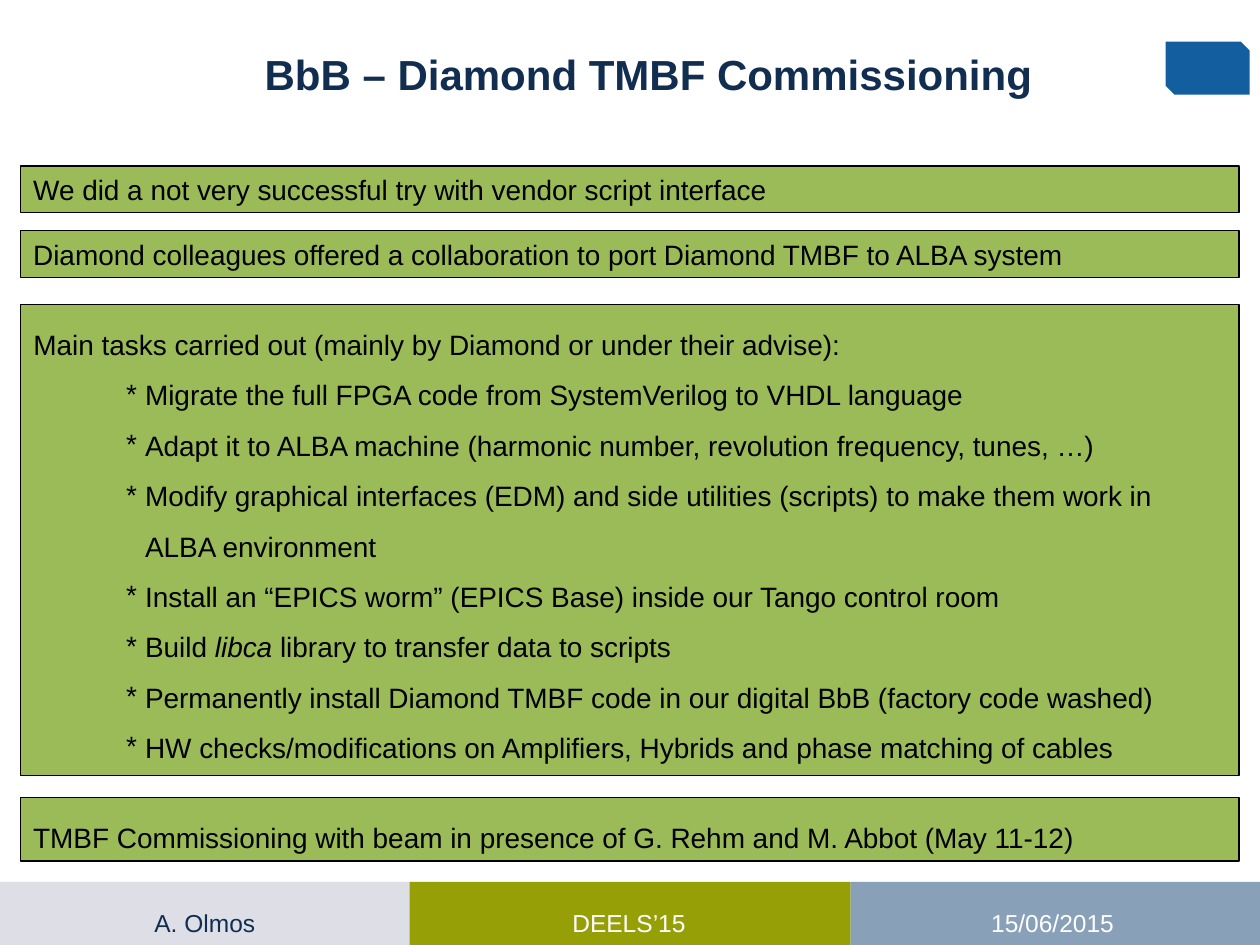
from pptx import Presentation
from pptx.dml.color import RGBColor
from pptx.enum import shapes, text
from pptx.oxml import parse_xml
from pptx.oxml.ns import nsdecls
from pptx.util import Cm, Pt

NAVY = RGBColor(0x11, 0x2E, 0x50)
BLUE = RGBColor(0x12, 0x5E, 0x9F)
GREEN = RGBColor(0x9B, 0xBB, 0x59)
GREY = RGBColor(0xDE, 0xDF, 0xE6)
OLIVE = RGBColor(0x97, 0x9F, 0x07)
STEEL = RGBColor(0x88, 0xA0, 0xB8)
WHITE = RGBColor(0xFF, 0xFF, 0xFF)
BLACK = RGBColor(0, 0, 0)

TITLE = "BbB – Diamond TMBF Commissioning"
# text, top, height, line spacing
NOTES = [
    ("We did a not very successful try with vendor script interface", 3.35, 0.94, 1),
    ("Diamond colleagues offered a collaboration to port Diamond TMBF to ALBA system",
     4.65, 0.94, 1),
    ("TMBF Commissioning with beam in presence of G. Rehm and M. Abbot (May 11-12)",
     16.08, 1.28, 1.5),
]
LEAD = "Main tasks carried out (mainly by Diamond or under their advise):"
# each task is a list of runs; a run in a tuple is italic
TASKS = [
    ["Migrate the full FPGA code from SystemVerilog to VHDL language"],
    ["Adapt it to ALBA machine (harmonic number, revolution frequency, tunes, …)"],
    ["Modify graphical interfaces (EDM) and side utilities (scripts) to make them work in",
     "\n", "ALBA environment"],
    ["Install an “EPICS worm” (EPICS Base) inside our Tango control room"],
    ["Build ", ("libca",), " library to transfer data to scripts"],
    ["Permanently install Diamond TMBF code in our digital BbB (factory code washed)"],
    ["HW checks/modifications on Amplifiers, Hybrids and phase matching of cables"],
]
# text, text colour, fill, band left, band width, text left, text width
FOOT = [
    ("A. Olmos", NAVY, GREY, 0, 8.89, 0, 8.26),
    ("DEELS’15", WHITE, OLIVE, 8.26, 8.89, 8.26, 8.84),
    ("15/06/2015", WHITE, STEEL, 17.15, 8.25, 17.09, 8.26),
]
LEFT, WIDE = 0.42, 24.56


def place(item, left, top, width, height):
    item.left, item.top = Cm(left), Cm(top)
    item.width, item.height = Cm(width), Cm(height)


def paint(item, fill, line=None):
    item.fill.solid()
    item.fill.fore_color.rgb = fill
    if line is None:
        item.line.fill.background()
    else:
        item.line.color.rgb = line
        item.line.width = Pt(0.75)


def block(kind, fill, box, line=None):
    item = slide.shapes.add_shape(kind, *map(Cm, box))
    item.shadow.inherit = False
    paint(item, fill, line)
    return item


def write(par, runs, size, color, bold=False, align=text.PP_ALIGN.LEFT, gap=1):
    par.alignment = align
    par.line_spacing = gap
    par.space_before = Pt(0)
    for part in runs:
        if part == "\n":
            par.add_line_break()
            continue
        run = par.add_run()
        run.text = part[0] if isinstance(part, tuple) else part
        font = run.font
        font.name, font.size, font.bold = "Arial", Pt(size), bold
        font.italic = isinstance(part, tuple)
        font.color.rgb = color


def bullet(par, mark, left, hang):
    """Give the paragraph a hanging bullet; lengths in cm, mark None for no bullet."""
    props = par._p.get_or_add_pPr()
    props.set("marL", str(Cm(left + hang)))
    props.set("indent", str(-Cm(hang)))
    tag = f'a:buChar {nsdecls("a")} char="{mark}"' if mark else f'a:buNone {nsdecls("a")}'
    if mark:
        props.append(parse_xml(f'<a:buFont {nsdecls("a")} typeface="Arial"/>'))
    props.append(parse_xml(f"<{tag}/>"))


deck = Presentation()
deck.slide_width, deck.slide_height = Cm(25.4), Cm(19.05)
slide = deck.slides.add_slide(deck.slide_layouts[1])
title, body = slide.placeholders

block(shapes.MSO_SHAPE.SNIP_2_DIAG_RECTANGLE, BLUE, (23.5, 0.84, 1.69, 1.07))
for _, _, fill, left, width, _, _ in FOOT:
    block(shapes.MSO_SHAPE.RECTANGLE, fill, (left, 17.78, width, 1.27))
for words, color, _, _, _, left, width in FOOT:
    label = slide.shapes.add_textbox(Cm(left), Cm(18.19), Cm(width), Cm(0.86))
    label.text_frame.word_wrap = True
    write(label.text_frame.paragraphs[0], [words], 14, color,
          align=text.PP_ALIGN.CENTER)

place(title, 5.08, 0.84, 18.2, 1.28)
title.text_frame.auto_size = text.MSO_AUTO_SIZE.NONE
write(title.text_frame.paragraphs[0], [TITLE], 24, NAVY, bold=True)

for words, top, height, gap in NOTES:
    note = block(shapes.MSO_SHAPE.RECTANGLE, GREEN, (LEFT, top, WIDE, height), BLACK)
    note.text_frame.word_wrap = True
    write(note.text_frame.paragraphs[0], [words], 16, BLACK, gap=gap)

place(body, LEFT, 6.14, WIDE, 9.5)
paint(body, GREEN, BLACK)
frame = body.text_frame
frame.auto_size = text.MSO_AUTO_SIZE.NONE
bullet(frame.paragraphs[0], None, 0, 0)
write(frame.paragraphs[0], [LEAD], 16, BLACK, gap=1.5)
for task in TASKS:
    par = frame.add_paragraph()
    bullet(par, "*", 1.87, 0.38)
    write(par, task, 16, BLACK, gap=1.5)

deck.save("out.pptx")
